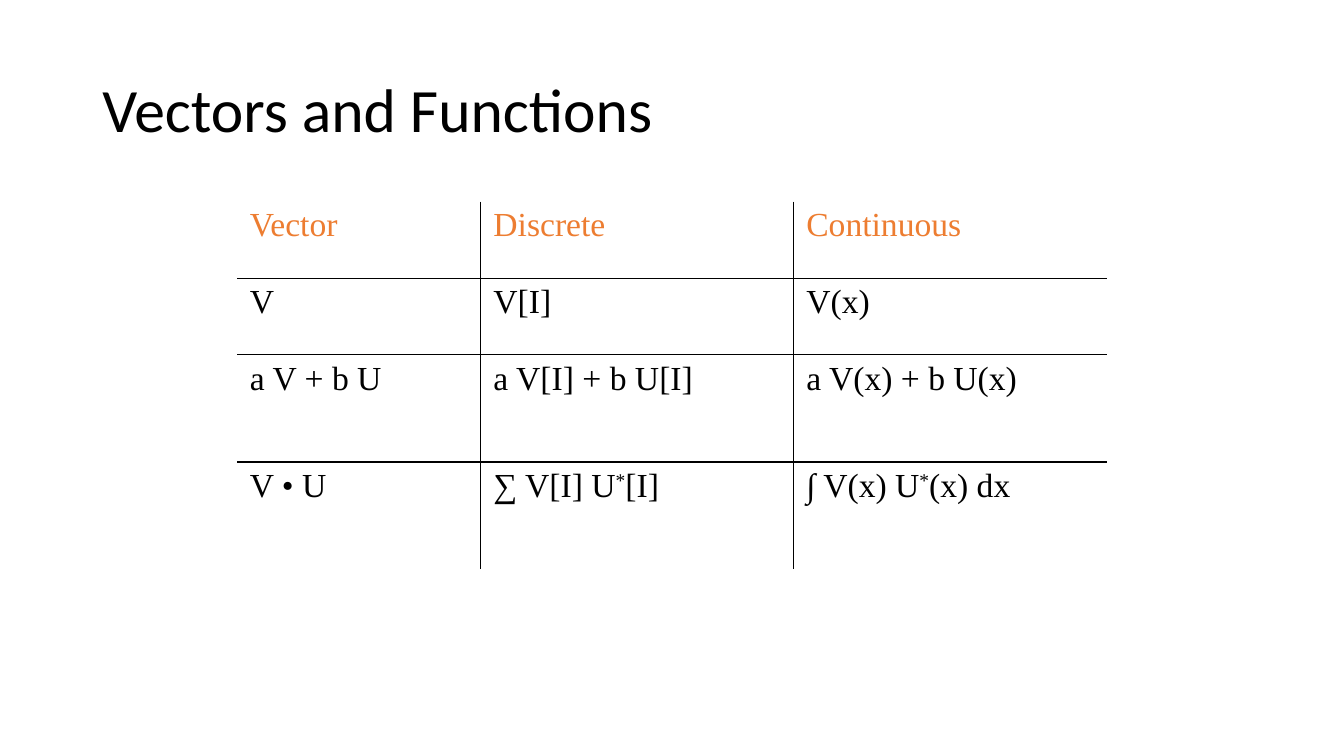
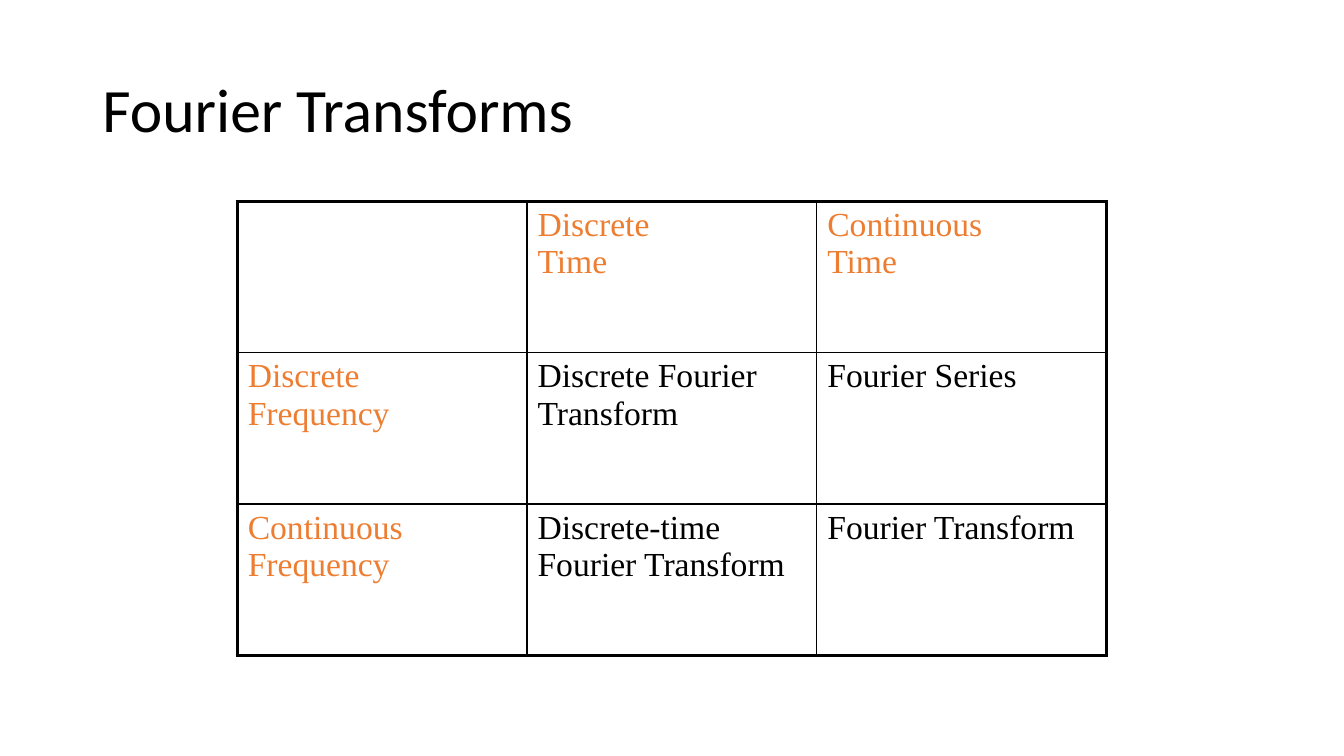
from dataclasses import dataclass
from typing import Any

from pptx import Presentation
from pptx import util as u
from pptx.dml.color import RGBColor
from pptx.enum import text
from pptx.oxml import parse_xml
from pptx.oxml.ns import nsdecls

PX = 9525
BLACK = RGBColor(0x00, 0x00, 0x00)
ORANGE = RGBColor(0xED, 0x7D, 0x31)

SLIDE_WIDTH, SLIDE_HEIGHT = 1280, 720
TITLE_LAYOUT = 5
TABLE_LEFT, TABLE_TOP = 226, 192
CELL_MARGIN_Y = 5
INNER_LINE = 1
SUPERSCRIPT_MARK = "^"
SUPERSCRIPT_BASELINE = "30000"


def px(length: int) -> u.Emu:
    return u.Emu(length * PX)


TITLE_BOX = {"left": px(88), "top": px(38), "width": px(1104), "height": px(139)}
TITLE_FRAME = {
    "word_wrap": True,
    "auto_size": text.MSO_AUTO_SIZE.NONE,
    "vertical_anchor": text.MSO_ANCHOR.MIDDLE,
}
TITLE_PARAGRAPH = {"alignment": text.PP_ALIGN.LEFT, "line_spacing": 0.9}
TITLE_FONT = {"name": "Calibri", "size": u.Pt(44)}
CELL_FONT = {"name": "Times New Roman", "size": u.Pt(24), "bold": False}
PLAIN_TABLE = {"first_row": False, "horz_banding": False}


@dataclass(frozen=True)
class TableSlide:
    title: str
    columns: tuple[int, ...]
    rows: tuple[int, ...]
    cells: tuple[tuple[str, ...], ...]
    margin_x: int
    outer_line: float
    header_column: bool


TABLE_SLIDES = (
    TableSlide(
        title="Vectors and Functions",
        columns=(232, 298, 298),
        rows=(73, 73, 102, 102),
        cells=(
            ("Vector", "Discrete", "Continuous"),
            ("V", "V[I]", "V(x)"),
            ("a V + b U", "a V[I] + b U[I]", "a V(x) + b U(x)"),
            ("V • U", "∑ V[I] U^*^[I]", "∫ V(x) U^*^(x) dx"),
        ),
        margin_x=12,
        outer_line=0,
        header_column=False,
    ),
    TableSlide(
        title="Fourier Transforms",
        columns=(276,) * 3,
        rows=(144,) * 3,
        cells=(
            ("", "Discrete\nTime", "Continuous\nTime"),
            ("Discrete\nFrequency", "Discrete Fourier Transform", "Fourier Series"),
            ("Continuous\nFrequency", "Discrete-time Fourier Transform", "Fourier Transform"),
        ),
        margin_x=10,
        outer_line=2.25,
        header_column=True,
    ),
)


def apply_format(target: Any, values: dict[str, Any]) -> None:
    for name, value in values.items():
        setattr(target, name, value)


def add_title(slide: Any, title: str) -> None:
    shape = slide.shapes.title
    apply_format(shape, TITLE_BOX)
    apply_format(shape.text_frame, TITLE_FRAME)
    shape.text_frame.text = title
    paragraph = shape.text_frame.paragraphs[0]
    apply_format(paragraph, TITLE_PARAGRAPH)
    apply_format(paragraph.font, TITLE_FONT)
    paragraph.font.color.rgb = BLACK


def set_border(cell: Any, side: str, width: float) -> None:
    paint = (
        f'<a:solidFill><a:srgbClr val="{BLACK}"/></a:solidFill>' if width else "<a:noFill/>"
    )
    line = f'<a:ln{side} {nsdecls("a")} w="{int(u.Pt(width))}">{paint}</a:ln{side}>'
    cell._tc.get_or_add_tcPr().append(parse_xml(line))


def write_cell(cell: Any, content: str, color: RGBColor) -> None:
    frame = cell.text_frame
    for line_index, line in enumerate(content.split("\n")):
        paragraph = frame.add_paragraph() if line_index else frame.paragraphs[0]
        for part_index, part in enumerate(line.split(SUPERSCRIPT_MARK)):
            if not part:
                continue
            run = paragraph.add_run()
            run.text = part
            apply_format(run.font, CELL_FONT)
            run.font.color.rgb = color
            if part_index % 2:
                run._r.get_or_add_rPr().set("baseline", SUPERSCRIPT_BASELINE)


def add_table(slide: Any, content: TableSlide) -> None:
    row_count, column_count = len(content.rows), len(content.columns)
    table = slide.shapes.add_table(
        row_count,
        column_count,
        px(TABLE_LEFT),
        px(TABLE_TOP),
        px(sum(content.columns)),
        px(sum(content.rows)),
    ).table
    apply_format(table, PLAIN_TABLE)
    for column, width in zip(table.columns, content.columns):
        column.width = px(width)
    for row, height in zip(table.rows, content.rows):
        row.height = px(height)

    margins = {
        "margin_left": px(content.margin_x),
        "margin_right": px(content.margin_x),
        "margin_top": px(CELL_MARGIN_Y),
        "margin_bottom": px(CELL_MARGIN_Y),
    }
    for row_index, texts in enumerate(content.cells):
        for column_index, cell_text in enumerate(texts):
            cell = table.cell(row_index, column_index)
            apply_format(cell, margins)
            outer_sides = {
                "L": column_index == 0,
                "R": column_index == column_count - 1,
                "T": row_index == 0,
                "B": row_index == row_count - 1,
            }
            for side, is_outer in outer_sides.items():
                set_border(cell, side, content.outer_line if is_outer else INNER_LINE)
            cell.fill.background()
            is_header = row_index == 0 or (content.header_column and column_index == 0)
            write_cell(cell, cell_text, ORANGE if is_header else BLACK)


def main() -> None:
    presentation = Presentation()
    presentation.slide_width = px(SLIDE_WIDTH)
    presentation.slide_height = px(SLIDE_HEIGHT)
    for content in TABLE_SLIDES:
        slide = presentation.slides.add_slide(presentation.slide_layouts[TITLE_LAYOUT])
        add_title(slide, content.title)
        add_table(slide, content)
    presentation.save("out.pptx")


if __name__ == "__main__":
    main()
